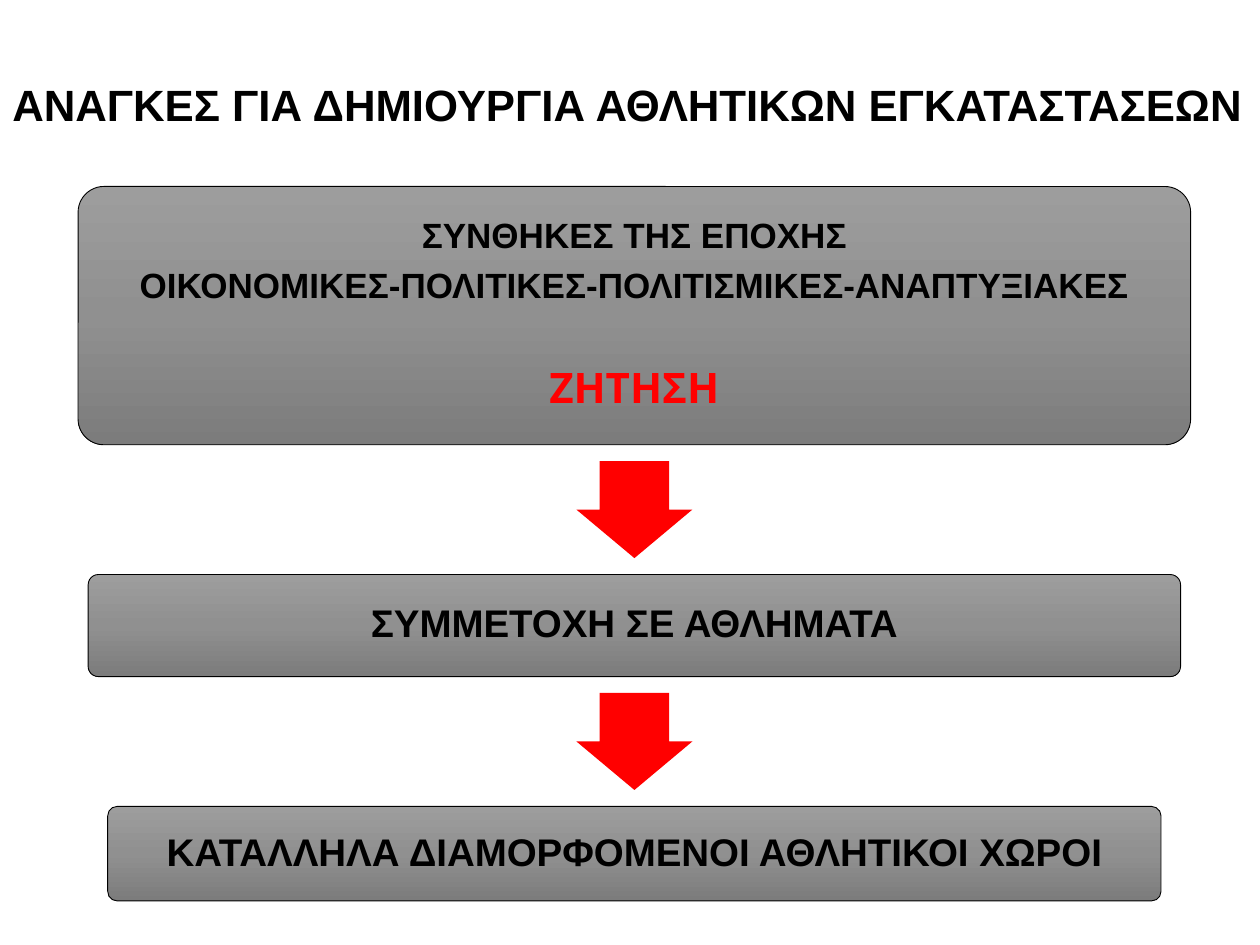
from copy import deepcopy
from dataclasses import dataclass

from pptx import Presentation
from pptx import util as u
from pptx.dml.color import RGBColor
from pptx.enum import shapes, text


@dataclass(frozen=True)
class Theme:
    ink: str = "000000"
    accent: str = "FF0000"
    box_stops: tuple = ((0, "9D9D9D"), (0.5, "909090"), (1, "7C7C7C"))
    font: str = "Arial"
    accent_font: str = "Montserrat"
    title_size: int = 25
    step_size: int = 22
    detail_size: int = 20
    demand_size: int = 24


THEME = Theme()
INSETS = ("margin_left", "margin_top", "margin_right", "margin_bottom")


def set_attributes(target, values):
    for name, value in values.items():
        setattr(target, name, value)


def prepare_frame(frame, inset):
    set_attributes(frame, {"word_wrap": True,
                           "vertical_anchor": text.MSO_ANCHOR.MIDDLE})
    set_attributes(frame, {side: u.Inches(inset) for side in INSETS})


def write_paragraph(paragraph, wording, size, align, color=THEME.ink,
                    font=THEME.font, after=0):
    set_attributes(paragraph, {"alignment": align, "line_spacing": 0.9,
                               "space_after": u.Pt(after)})
    run = paragraph.add_run()
    run.text = wording
    set_attributes(run.font, {"size": u.Pt(size), "name": font, "bold": True})
    run.font.color.rgb = RGBColor.from_string(color)


def fill_gradient(fill):
    fill.gradient()
    fill.gradient_angle = 270
    stop_list = fill._fill._gradFill.gsLst
    stop_list.append(deepcopy(stop_list[-1]))
    for stop, (position, color) in zip(fill.gradient_stops, THEME.box_stops):
        stop.position = position
        stop.color.rgb = RGBColor.from_string(color)


def add_title(slide, left, top, width, height, wording):
    title = slide.shapes.add_textbox(*map(u.Inches, (left, top, width, height)))
    prepare_frame(title.text_frame, 0.1)
    write_paragraph(title.text_frame.paragraphs[0], wording, THEME.title_size,
                    text.PP_ALIGN.LEFT)


def add_step(slide, left, top, width, height, lines):
    step = slide.shapes.add_shape(shapes.MSO_SHAPE.ROUNDED_RECTANGLE,
                                  *map(u.Inches, (left, top, width, height)))
    step.adjustments[0] = 0.1
    step.shadow.inherit = False
    fill_gradient(step.fill)
    step.line.color.rgb = RGBColor.from_string(THEME.ink)
    step.line.width = u.Pt(0.5)
    frame = step.text_frame
    prepare_frame(frame, 0.08)
    for index, line in enumerate(lines):
        paragraph = frame.add_paragraph() if index else frame.paragraphs[0]
        write_paragraph(paragraph, align=text.PP_ALIGN.CENTER, **line)


def add_down_arrow(slide, center_x, top, width, height):
    # The right arrow is turned by 90 degrees, so its sides swap
    left = center_x - height / 2
    turned_top = top + (height - width) / 2
    arrow = slide.shapes.add_shape(shapes.MSO_SHAPE.RIGHT_ARROW,
                                   *map(u.Inches, (left, turned_top, height, width)))
    arrow.rotation = 90
    arrow.adjustments[0], arrow.adjustments[1] = 0.6, 0.5
    arrow.shadow.inherit = False
    arrow.fill.solid()
    arrow.fill.fore_color.rgb = RGBColor.from_string(THEME.accent)
    arrow.line.fill.background()


def add_flow(slide, left, top, width, steps):
    center_x = left + width / 2
    gap, arrow_width, arrow_height = 0.13, 0.92, 0.77
    for index, (step_width, step_height, lines) in enumerate(steps):
        if index:
            add_down_arrow(slide, center_x, top + gap, arrow_width, arrow_height)
            top += arrow_height + 2 * gap
        add_step(slide, center_x - step_width / 2, top, step_width, step_height, lines)
        top += step_height


def main():
    deck = Presentation()
    deck.slide_width, deck.slide_height = u.Inches(10), u.Inches(7.5)
    slide = deck.slides.add_slide(deck.slide_layouts[6])

    # Heading
    add_title(slide, 0, 0.3, 10, 1.11,
              "ΑΝΑΓΚΕΣ ΓΙΑ ΔΗΜΙΟΥΡΓΙΑ ΑΘΛΗΤΙΚΩΝ ΕΓΚΑΤΑΣΤΑΣΕΩΝ")

    # From demand through participation to venues
    conditions = [
        {"wording": "ΣΥΝΘΗΚΕΣ ΤΗΣ ΕΠΟΧΗΣ", "size": THEME.detail_size, "after": 7},
        {"wording": "ΟΙΚΟΝΟΜΙΚΕΣ-ΠΟΛΙΤΙΚΕΣ-ΠΟΛΙΤΙΣΜΙΚΕΣ-ΑΝΑΠΤΥΞΙΑΚΕΣ",
         "size": THEME.detail_size, "after": 35},
        {"wording": "ΖΗΤΗΣΗ", "size": THEME.demand_size,
         "color": THEME.accent, "font": THEME.accent_font},
    ]
    participation = [{"wording": "ΣΥΜΜΕΤΟΧΗ ΣΕ ΑΘΛΗΜΑΤΑ", "size": THEME.step_size}]
    venues = [{"wording": "ΚΑΤΑΛΛΗΛΑ ΔΙΑΜΟΡΦΟΜΕΝΟΙ ΑΘΛΗΤΙΚΟΙ ΧΩΡΟΙ",
               "size": THEME.step_size}]
    add_flow(slide, 0.62, 1.48, 8.83, [(8.83, 2.05, conditions),
                                       (8.67, 0.81, participation),
                                       (8.36, 0.75, venues)])

    deck.save("out.pptx")


if __name__ == "__main__":
    main()
